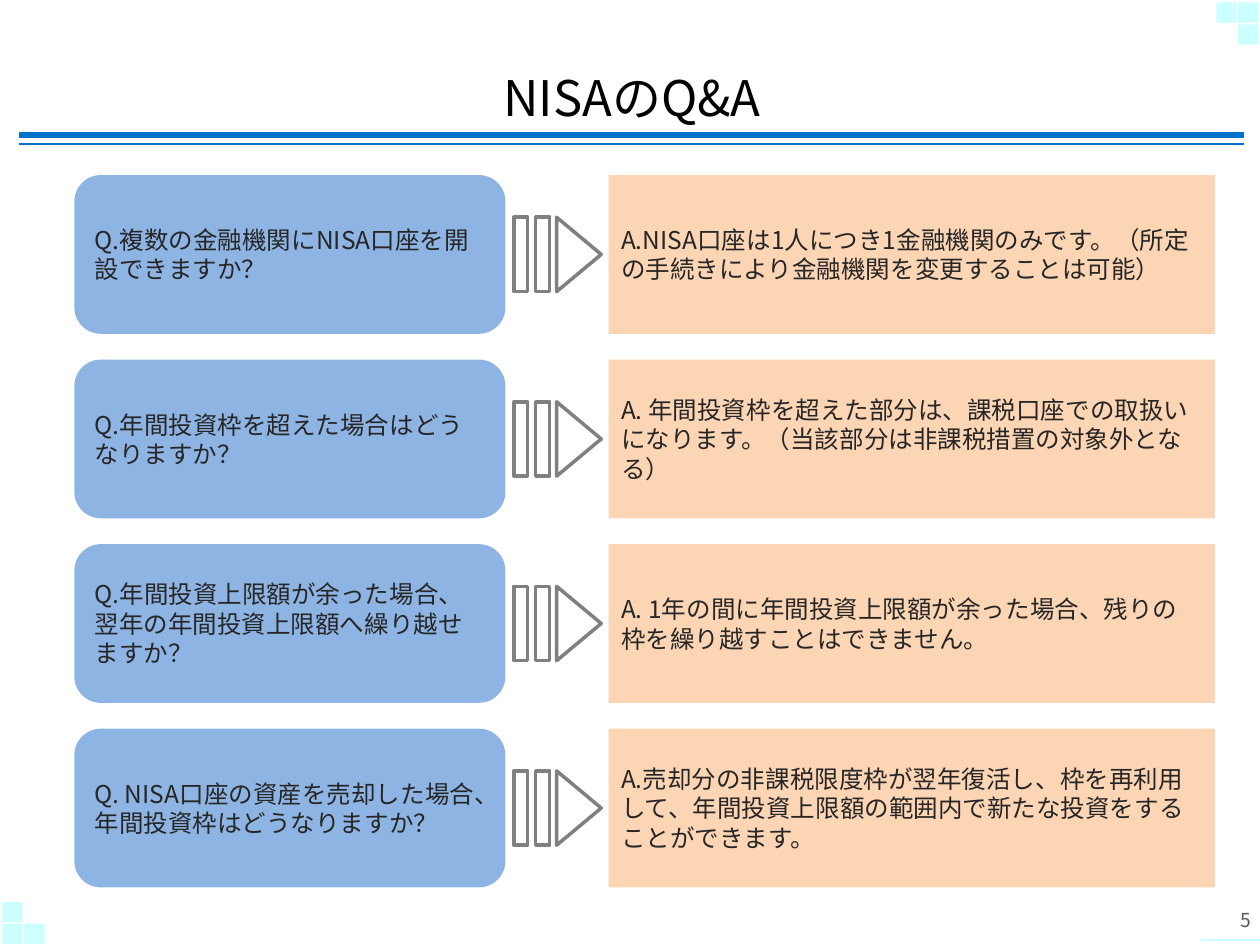
from typing import NamedTuple

import pptx
import pptx.dml.color
import pptx.enum.shapes
import pptx.enum.text
import pptx.oxml.ns
import pptx.util
from lxml import etree

Cm = pptx.util.Cm
Pt = pptx.util.Pt
SHAPES = pptx.enum.shapes.MSO_SHAPE
ALIGN = pptx.enum.text.PP_ALIGN
MIDDLE = pptx.enum.text.MSO_ANCHOR.MIDDLE

FONT = "Noto Sans CJK JP"
BLUE, PALE, GRAY, INK = "0072CE", "CCFFFF", "808080", "262626"
QUESTION_FILL, ANSWER_FILL = "8EB4E3", "FCD5B5"

FIRST_ROW, ROW_PITCH, ROW_HEIGHT = 3.53, 3.72, 3.2
ARROW_SPAN, ARROW_DEPTH, ARROW_CENTER = 1.5, 0.9, 11.67
TILE, TILE_PITCH = 0.41, 0.44


class Rule(NamedTuple):
    start: float
    end: float
    y: float
    color: str
    weight: float


class Box(NamedTuple):
    left: float
    top: float
    width: float
    height: float


class Exchange(NamedTuple):
    question: str
    answer: str


RULES = [
    Rule(0.38, 25.07, 2.72, BLUE, 3),
    Rule(0.38, 25.07, 2.9, BLUE, 1),
    Rule(24.21, 25.4, 18.95, PALE, 1.5),
]

EXCHANGES = [
    Exchange("Q.複数の金融機関にNISA口座を開設できますか？",
             "A.NISA口座は1人につき1金融機関のみです。"
             "（所定の手続きにより金融機関を変更することは可能）"),
    Exchange("Q.年間投資枠を超えた場合はどうなりますか？",
             "A. 年間投資枠を超えた部分は、課税口座での取扱いになります。"
             "（当該部分は非課税措置の対象外となる）"),
    Exchange("Q.年間投資上限額が余った場合、翌年の年間投資上限額へ繰り越せますか？",
             "A. 1年の間に年間投資上限額が余った場合、残りの枠を繰り越すことはできません。"),
    Exchange("Q. NISA口座の資産を売却した場合、年間投資枠はどうなりますか？",
             "A.売却分の非課税限度枠が翌年復活し、枠を再利用して、"
             "年間投資上限額の範囲内で新たな投資をすることができます。"),
]


def rgb(value: str) -> pptx.dml.color.RGBColor:
    return pptx.dml.color.RGBColor.from_string(value)


def write(frame, text: str, size: float, color: str, align) -> None:
    frame.word_wrap = True
    paragraph = frame.paragraphs[0]
    paragraph.alignment = align
    run = paragraph.add_run()
    run.text = text
    run.font.size = Pt(size)
    run.font.name = FONT
    run.font.color.rgb = rgb(color)
    east_asian = etree.SubElement(run.font._element, pptx.oxml.ns.qn("a:ea"))
    east_asian.set("typeface", FONT)


def add_block(shapes, kind, box: Box, fill: str = "", outline: str = ""):
    block = shapes.add_shape(kind, *map(Cm, box))
    block.shadow.inherit = False
    if fill:
        block.fill.solid()
        block.fill.fore_color.rgb = rgb(fill)
    else:
        block.fill.background()
    if outline:
        block.line.color.rgb = rgb(outline)
        block.line.width = Pt(2)
    else:
        block.line.fill.background()
    return block


def add_rule(shapes, rule: Rule) -> None:
    line = shapes.add_connector(pptx.enum.shapes.MSO_CONNECTOR.STRAIGHT,
                                Cm(rule.start), Cm(rule.y), Cm(rule.end), Cm(rule.y))
    line.line.color.rgb = rgb(rule.color)
    line.line.width = Pt(rule.weight)
    etree.SubElement(line._element.spPr, pptx.oxml.ns.qn("a:effectLst"))


def add_corner(shapes, left: float, top: float, cells) -> None:
    """Draw corner tiles at the given (column, row) cells."""
    for column, row in cells:
        add_block(shapes, SHAPES.RECTANGLE,
                  Box(left + column * TILE_PITCH, top + row * TILE_PITCH, TILE, TILE), PALE)


def add_arrow(shapes, middle: float) -> None:
    """Draw a striped arrow: two bars and a right-pointing triangle."""
    head = add_block(shapes, SHAPES.ISOSCELES_TRIANGLE,
                     Box(ARROW_CENTER - ARROW_SPAN / 2, middle - ARROW_DEPTH / 2,
                         ARROW_SPAN, ARROW_DEPTH), outline=GRAY)
    head.rotation = 90
    for left in (10.8, 10.36):
        add_block(shapes, SHAPES.RECTANGLE,
                  Box(left, middle - ARROW_SPAN / 2, 0.28, ARROW_SPAN), outline=GRAY)


def add_exchange(slide, exchange: Exchange, top: float) -> None:
    group = slide.shapes.add_group_shape().shapes
    question = add_block(group, SHAPES.ROUNDED_RECTANGLE,
                         Box(1.5, top, 8.69, ROW_HEIGHT), QUESTION_FILL)
    answer = add_block(group, SHAPES.RECTANGLE,
                       Box(12.27, top, 12.22, ROW_HEIGHT), ANSWER_FILL)
    for block, text in zip((question, answer), exchange):
        block.text_frame.vertical_anchor = MIDDLE
        write(block.text_frame, text, 14, INK, ALIGN.LEFT)
    add_arrow(group, top + ROW_HEIGHT / 2)


def main() -> None:
    deck = pptx.Presentation()
    deck.slide_width, deck.slide_height = Cm(25.4), Cm(19.05)
    slide = deck.slides.add_slide(deck.slide_layouts[5])

    for rule in RULES:
        add_rule(slide.shapes, rule)
    add_corner(slide.shapes, 0.05, 18.18, [(0, 1), (1, 1), (0, 0)])
    add_corner(slide.shapes, 24.52, 0.05, [(0, 0), (1, 1), (1, 0)])

    title = slide.shapes.title
    title.left, title.top, title.width, title.height = map(Cm, (0.51, 1.17, 24.46, 1.55))
    title.text_frame.vertical_anchor = MIDDLE
    write(title.text_frame, "NISAのQ&A", 28, "000000", ALIGN.CENTER)

    page_number = slide.shapes.add_textbox(*map(Cm, (23.88, 18.19, 1.6, 0.79)))
    write(page_number.text_frame, "5", 11, "595959", ALIGN.RIGHT)

    for index, exchange in enumerate(EXCHANGES):
        add_exchange(slide, exchange, FIRST_ROW + index * ROW_PITCH)

    deck.save("out.pptx")


if __name__ == "__main__":
    main()
